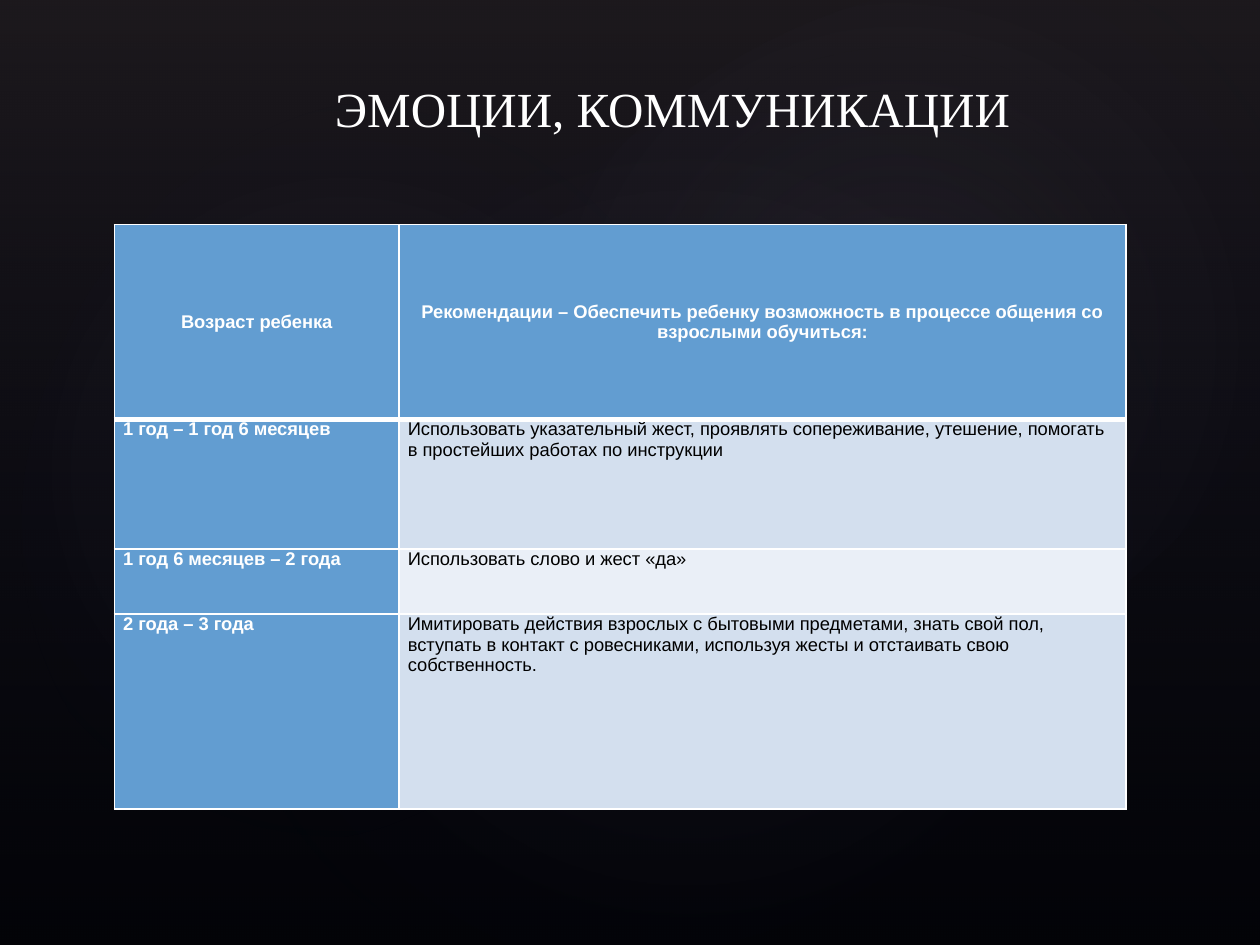
from dataclasses import dataclass

from pptx import Presentation
from pptx.dml.color import RGBColor
from pptx.enum.shapes import MSO_SHAPE
from pptx.enum.text import MSO_ANCHOR, PP_ALIGN
from pptx.oxml import parse_xml
from pptx.oxml.ns import nsdecls
from pptx.util import Pt


@dataclass(frozen=True)
class Theme:
    back: str = "000000"
    haze: str = "504652"
    glow: str = "C4BCC6"
    navy: str = "242852"
    white: str = "FFFFFF"
    black: str = "000000"
    blue: str = "629DD1"
    bands: tuple = ("D3DFEE", "EAEFF7")
    serif: str = "Times New Roman"
    sans: str = "Arial"
    head: float = 28
    body: float = 10.5


def put(obj, form):
    for name, value in form.items():
        setattr(obj, name, value)


class Deck:
    def __init__(self, theme, wide, high):
        self.theme = theme
        self.prs = Presentation()
        put(self.prs, {"slide_width": Pt(wide), "slide_height": Pt(high)})
        self.slide = self.prs.slides.add_slide(self.prs.slide_layouts[6])
        fill = self.slide.background.fill
        fill.solid()
        fill.fore_color.rgb = RGBColor.from_string(theme.back)

    def shade(self, kind, box, stops, way, turn=0):
        """Add a shape with a translucent gradient; stops are (place, colour, alpha)."""
        shape = self.slide.shapes.add_shape(kind, *map(Pt, box))
        shape.rotation = turn
        shape.shadow.inherit = False
        shape.line.fill.background()
        shape.fill.background()
        marks = "".join(
            f'<a:gs pos="{place * 1000}"><a:srgbClr val="{tone}">'
            f'<a:alpha val="{alpha * 1000}"/></a:srgbClr></a:gs>'
            for place, tone, alpha in stops)
        grad = parse_xml(f'<a:gradFill {nsdecls("a")} rotWithShape="1">'
                         f'<a:gsLst>{marks}</a:gsLst>{way}</a:gradFill>')
        props = shape._element.spPr
        props.replace(props.find("{*}noFill"), grad)

    def label(self, frame, text, align, tone, form):
        para = frame.paragraphs[0]
        para.alignment = align
        run = para.add_run()
        run.text = text
        put(run.font, form)
        run.font.color.rgb = RGBColor.from_string(tone)

    def title(self, text, box):
        look = self.theme
        frame = self.slide.shapes.add_textbox(*map(Pt, box)).text_frame
        put(frame, {"word_wrap": True, "margin_top": Pt(7.5),
                    "vertical_anchor": MSO_ANCHOR.TOP})
        self.label(frame, text, PP_ALIGN.LEFT, look.white,
                   {"name": look.serif, "size": Pt(look.head)})

    def edge(self, cell, low):
        props = cell._tc.get_or_add_tcPr()
        for side, width in (("L", 1), ("R", 1), ("T", 1), ("B", low)):
            props.append(parse_xml(
                f'<a:ln{side} {nsdecls("a")} w="{Pt(width)}"><a:solidFill>'
                f'<a:srgbClr val="{self.theme.white}"/></a:solidFill></a:ln{side}>'))

    def cell(self, cell, text, row, col):
        look = self.theme
        top, bold = row == 0, row == 0 or col == 0
        put(cell, {"margin_left": Pt(5), "margin_right": Pt(5),
                   "margin_top": 0, "margin_bottom": 0,
                   "vertical_anchor": MSO_ANCHOR.MIDDLE if top else MSO_ANCHOR.TOP})
        self.edge(cell, 3 if top else 1)
        cell.fill.solid()
        tone = look.blue if bold else look.bands[(row - 1) % 2]
        cell.fill.fore_color.rgb = RGBColor.from_string(tone)
        self.label(cell.text_frame, text,
                   PP_ALIGN.CENTER if top else PP_ALIGN.LEFT,
                   look.white if bold else look.black,
                   {"name": look.sans, "size": Pt(look.body), "bold": bold})

    def table(self, rows, spot, cols, highs):
        grid = self.slide.shapes.add_table(
            len(rows), len(cols), *map(Pt, (*spot, sum(cols), sum(highs)))).table
        for col, wide in zip(grid.columns, cols):
            col.width = Pt(wide)
        for i, (line, high) in enumerate(zip(rows, highs)):
            grid.rows[i].height = Pt(high)
            for j, text in enumerate(line):
                self.cell(grid.cell(i, j), text, i, j)


ROWS = [
    ("Возраст ребенка",
     "Рекомендации – Обеспечить ребенку возможность в процессе общения "
     "со взрослыми обучиться:"),
    ("1 год – 1 год 6 месяцев",
     "Использовать указательный жест, проявлять сопереживание, утешение, "
     "помогать в простейших работах по инструкции"),
    ("1 год 6 месяцев – 2 года", "Использовать слово и жест «да»"),
    ("2 года – 3 года",
     "Имитировать действия взрослых с бытовыми предметами, знать свой пол, "
     "вступать в контакт с ровесниками, используя жесты и отстаивать свою "
     "собственность."),
]

# Box, turn and strength of each soft glow
GLOWS = [
    ((108, 82.1, 570.2, 449.3), 328.7, 7),
    ((-21.6, 92.2, 436.3, 352.8), 294.3, 8),
    ((257.8, 9.4, 510.5, 374.4), 328.7, 8),
]


def main():
    theme = Theme()
    deck = Deck(theme, 720, 540)

    # Backdrop
    deck.shade(MSO_SHAPE.RECTANGLE, (0, 0, 720, 540),
               [(0, theme.haze, 36), (100, theme.navy, 10)],
               '<a:lin ang="5400000" scaled="0"/>')
    for box, turn, alpha in GLOWS:
        deck.shade(MSO_SHAPE.OVAL, box,
                   [(0, theme.glow, alpha), (58, theme.navy, 0)],
                   '<a:path path="circle"><a:fillToRect l="50000" t="50000" '
                   'r="50000" b="50000"/></a:path>', turn)

    # Table and title
    deck.table(ROWS, (65.4, 128.3), (162.7, 415.4), (111.4, 74.2, 37.1, 111.4))
    deck.title("ЭМОЦИИ, КОММУНИКАЦИИ", (184.3, 37.4, 403.9, 63.4))

    deck.prs.save("out.pptx")


if __name__ == "__main__":
    main()
